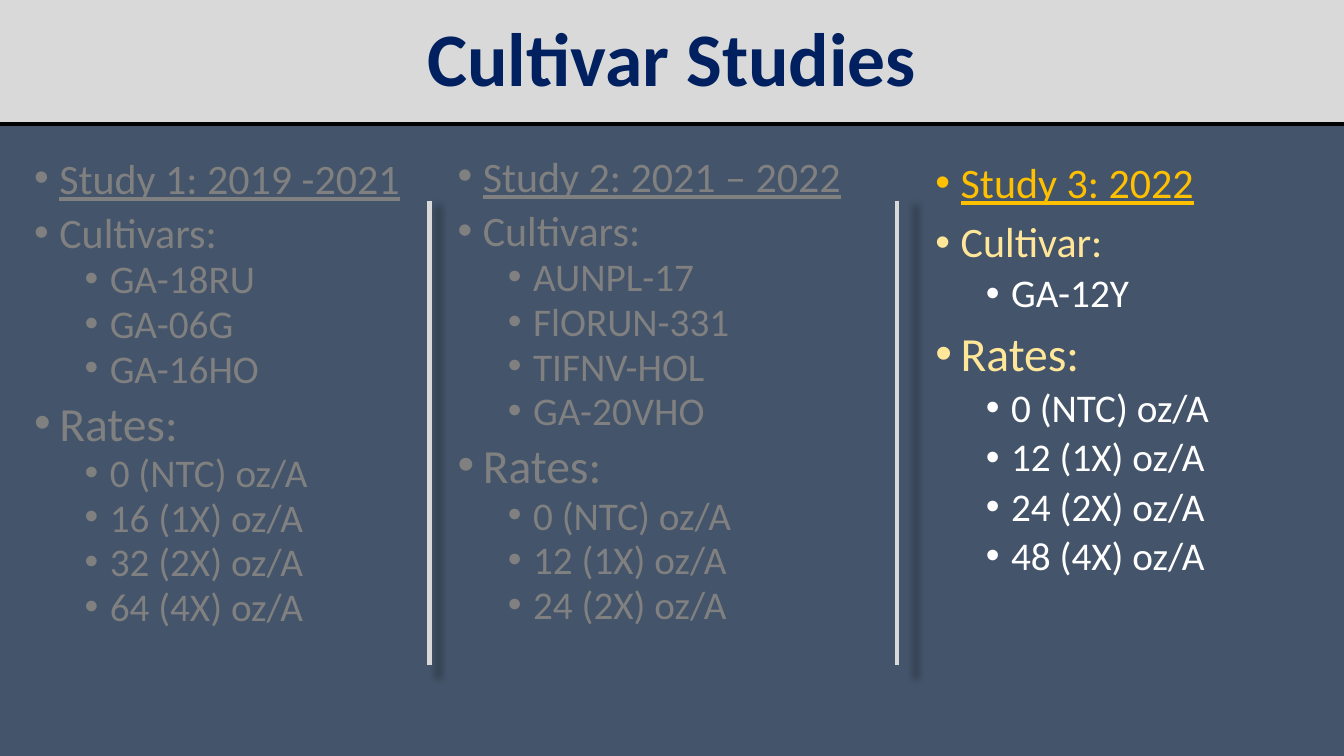
"""Build the Cultivar Studies slide with three study columns."""
from lxml import etree
from pptx import Presentation
from pptx.dml.color import RGBColor as Rgb
from pptx.enum.shapes import MSO_CONNECTOR as Link, MSO_SHAPE as Shape
from pptx.enum.text import MSO_ANCHOR as Anchor, PP_ALIGN as Align
from pptx.oxml.ns import qn
from pptx.util import Inches, Pt

SLATE = Rgb(0x44, 0x54, 0x6A)
SILVER = Rgb(0xD9, 0xD9, 0xD9)
NAVY = Rgb(0x00, 0x20, 0x60)
BLACK = Rgb(0x00, 0x00, 0x00)
WHITE = Rgb(0xFF, 0xFF, 0xFF)
GREY = Rgb(0x80, 0x80, 0x80)
GOLD = Rgb(0xFF, 0xC0, 0x00)
CREAM = Rgb(0xFF, 0xE6, 0x99)

FONT = "Calibri"
WIDTH, HEIGHT = 13.33, 7.5
BAND = 1.23
DIM = (GREY, GREY, GREY)
BRIGHT = (GOLD, CREAM, WHITE)

STUDIES = [
    ((0.24, 1.56, 3.91, 5.2), DIM, 0.8, "Study 1: 2019 -2021", "Cultivars:",
     ["GA-18RU", "GA-06G", "GA-16HO"],
     ["0 (NTC) oz/A", "16 (1X) oz/A", "32 (2X) oz/A", "64 (4X) oz/A"]),
    ((4.44, 1.54, 4.46, 5.2), DIM, 0.8, "Study 2: 2021 – 2022", "Cultivars:",
     ["AUNPL-17", "FlORUN-331", "TIFNV-HOL", "GA-20VHO"],
     ["0 (NTC) oz/A", "12 (1X) oz/A", "24 (2X) oz/A"]),
    ((9.18, 1.56, 3.91, 5.2), BRIGHT, 0.9, "Study 3: 2022", "Cultivar:",
     ["GA-12Y"],
     ["0 (NTC) oz/A", "12 (1X) oz/A", "24 (2X) oz/A", "48 (4X) oz/A"]),
]
RULES = (4.26, 8.9)


def style(para, size, color):
    """Format the runs of a paragraph."""
    for run in para.runs:
        run.font.name = FONT
        run.font.size = Pt(size)
        run.font.color.rgb = color


def bullet(para, level):
    """Give a paragraph a hanging round bullet."""
    props = para._p.get_or_add_pPr()
    props.set("marL", str(Inches(0.25 + 0.5 * level)))
    props.set("indent", str(Inches(-0.25)))
    etree.SubElement(props, qn("a:buFont")).set("typeface", "Arial")
    etree.SubElement(props, qn("a:buChar")).set("char", "•")


def add_line(slide, start, end, color, width):
    """Draw a plain line and return its effect list."""
    ends = [Inches(v) for v in (*start, *end)]
    line = slide.shapes.add_connector(Link.STRAIGHT, *ends)
    line.line.color.rgb = color
    line.line.width = Pt(width)
    return etree.SubElement(line._element.spPr, qn("a:effectLst"))


def add_rule(slide, left, top, bottom):
    """Draw an upright rule with a soft, slightly enlarged shadow."""
    effects = add_line(slide, (left, top), (left, bottom), SILVER, 3)
    shade = etree.SubElement(effects, qn("a:outerShdw"), blurRad=str(Pt(5)),
                             sx="102000", sy="102000", algn="ctr",
                             rotWithShape="0")
    ink = etree.SubElement(shade, qn("a:srgbClr"), val=str(BLACK))
    etree.SubElement(ink, qn("a:alpha"), val="40000")


def add_title(slide, box, text):
    """Draw the title band with a line along its lower edge."""
    left, top, width, height = box
    band = slide.shapes.add_shape(Shape.RECTANGLE, *map(Inches, box))
    band.shadow.inherit = False
    band.fill.solid()
    band.fill.fore_color.rgb = SILVER
    band.line.fill.background()
    frame = band.text_frame
    frame.vertical_anchor = Anchor.MIDDLE
    frame.text = text
    para = frame.paragraphs[0]
    para.alignment = Align.CENTER
    para.line_spacing = 0.9
    style(para, 54, NAVY)
    para.runs[0].font.bold = True
    base = top + height
    add_line(slide, (left, base), (left + width, base), BLACK, 2.25)


def add_study(slide, box, colors, pitch, name, label, kinds, rates):
    """Write one study column as a two-level bullet list."""
    head, sub, body = colors
    rows = [(name, 0, 30, head), (label, 0, 30, sub)]
    rows += [(kind, 1, 28, body) for kind in kinds]
    rows += [("Rates:", 0, 34, sub)]
    rows += [(rate, 1, 28, body) for rate in rates]
    frame = slide.shapes.add_textbox(*map(Inches, box)).text_frame
    frame.word_wrap = True
    frame.text = "\n".join(row[0] for row in rows)
    for i, (para, row) in enumerate(zip(frame.paragraphs, rows)):
        _, level, size, color = row
        bullet(para, level)
        para.level = level
        para.line_spacing = pitch
        if i:
            para.space_before = Pt(5 if level else 10)
        style(para, size, color)
    frame.paragraphs[0].runs[0].font.underline = True


def main():
    """Build and save the slide."""
    deck = Presentation()
    deck.slide_width, deck.slide_height = Inches(WIDTH), Inches(HEIGHT)
    slide = deck.slides.add_slide(deck.slide_layouts[6])
    slide.background.fill.solid()
    slide.background.fill.fore_color.rgb = SLATE
    add_title(slide, (0, 0, WIDTH, BAND), "Cultivar Studies")
    for study in STUDIES:
        add_study(slide, *study)
    for left in RULES:
        add_rule(slide, left, 1.99, 6.6)
    deck.save("out.pptx")


if __name__ == "__main__":
    main()
